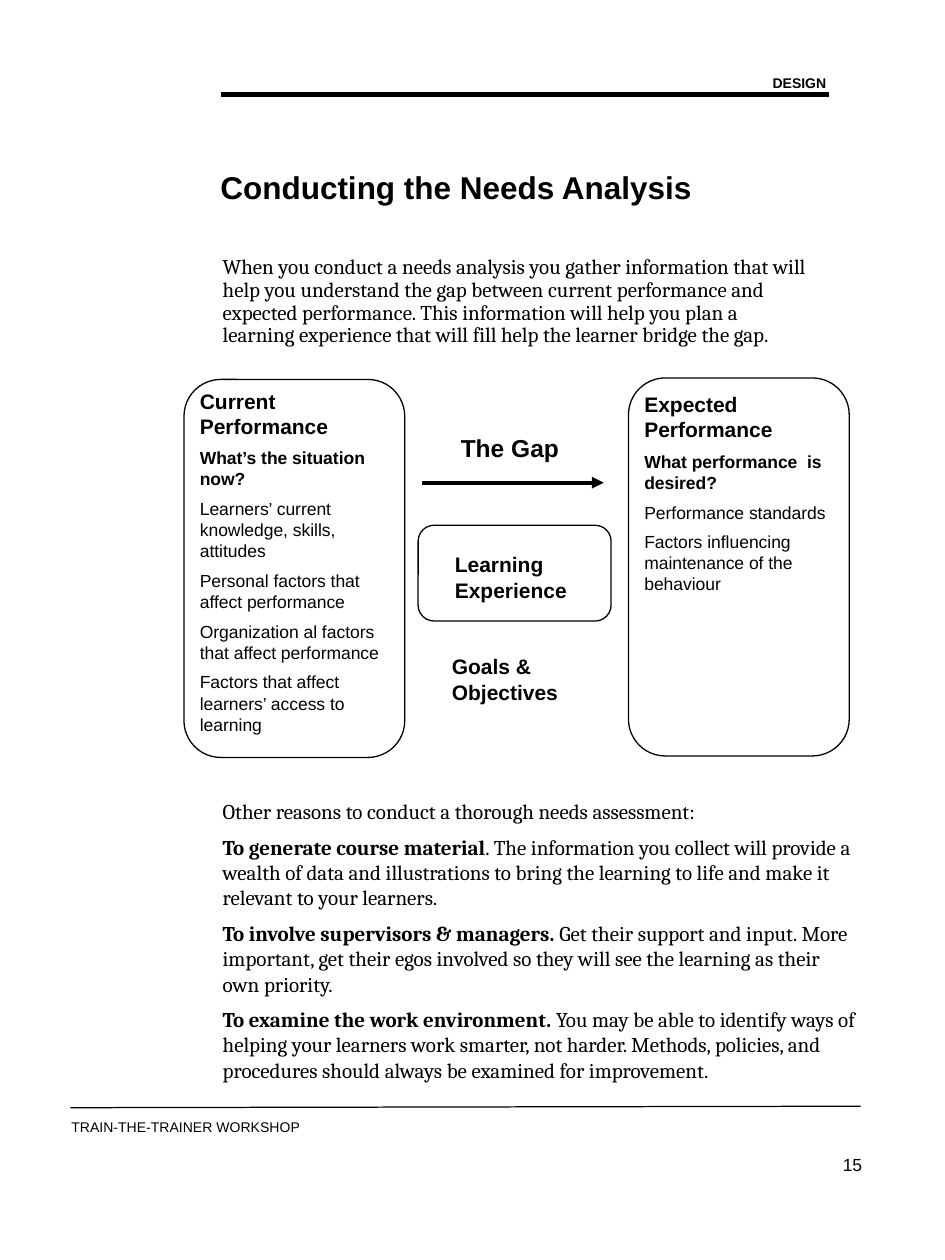
from lxml import etree
from pptx import Presentation
from pptx.dml.color import RGBColor
from pptx.enum.shapes import MSO_CONNECTOR, MSO_SHAPE
from pptx.enum.text import MSO_ANCHOR, MSO_AUTO_SIZE, PP_ALIGN
from pptx.oxml.ns import qn
from pptx.util import Cm, Pt

ROUND = MSO_SHAPE.ROUNDED_RECTANGLE
STRAIGHT = MSO_CONNECTOR.STRAIGHT
LEFT, RIGHT = PP_ALIGN.LEFT, PP_ALIGN.RIGHT
MIDDLE = MSO_ANCHOR.MIDDLE
GROW, FIXED = MSO_AUTO_SIZE.SHAPE_TO_FIT_TEXT, MSO_AUTO_SIZE.NONE
COLORS = {"ink": "000000"}
SANS, SERIF = "Arial", "Cambria"


def ink():
    """Return the colour of all text and lines."""
    return RGBColor.from_string(COLORS["ink"])


def write(frame, paras, size=12, font=SANS, bold=False, align=LEFT, lead=None):
    """Fill a frame; a paragraph is a list of (text, size, bold) or a string."""
    frame.word_wrap = True
    for i, runs in enumerate(paras):
        para = frame.paragraphs[0] if i == 0 else frame.add_paragraph()
        para.alignment = align
        if lead:
            para.line_spacing = lead
        if isinstance(runs, str):
            runs = [(runs, size, bold)]
        para.space_before = Pt(runs[0][1] / 2 if i else 0)
        for words, points, heavy in runs:
            run = para.add_run()
            run.text = words
            run.font.name = font
            run.font.size = Pt(points)
            run.font.bold = heavy
            run.font.color.rgb = ink()


def label(slide, box, paras, **style):
    """Add a text box at (left, top, width, height) in centimetres."""
    shape = slide.shapes.add_textbox(*map(Cm, box))
    shape.text_frame.auto_size = GROW
    write(shape.text_frame, paras, **style)


def rule(slide, ends, width, arrow=False):
    """Draw a straight line between two points, with an optional arrowhead."""
    line = slide.shapes.add_connector(STRAIGHT, *map(Cm, ends))
    line.line.color.rgb = ink()
    line.line.width = Pt(width)
    if arrow:
        etree.SubElement(line.line._get_or_add_ln(), qn("a:tailEnd"), type="triangle")
    etree.SubElement(line._element.spPr, qn("a:effectLst"))


def frame(slide, box):
    """Draw an unfilled rounded outline."""
    shape = slide.shapes.add_shape(ROUND, *map(Cm, box))
    shape.shadow.inherit = False
    shape.fill.background()
    shape.line.color.rgb = ink()
    shape.line.width = Pt(0.75)


def header(slide, box):
    """Place the section name, its rule and the slide title."""
    x, y, w, h = box
    rule(slide, (x, y + 0.54, x + w, y + 0.54), 3)
    label(slide, (x + w - 6.35, y, 6.55, h), ["DESIGN"], size=8, bold=True, align=RIGHT)
    title = slide.shapes.title
    title.left, title.top = Cm(x - 0.26), Cm(y + 2.29)
    title.width, title.height = Cm(11.86), Cm(0.2)
    title.text_frame.auto_size = FIXED
    title.text_frame.vertical_anchor = MIDDLE
    write(title.text_frame, ["Conducting the Needs Analysis"], size=18, bold=True)


def card(slide, box, drop, head, ask, points):
    """Place a performance card: outline, heading, question and points."""
    x, y, w, h = box
    frame(slide, box)
    paras = [[(head, 12, True)], [(ask, 10, True)], *points]
    label(slide, (x + 0.07, y + drop, w - 0.11, h - 0.2), paras, size=10)


def gap(slide, box):
    """Place the arrow, learning box and goals between the cards."""
    x, y, w, h = box
    rule(slide, (x + 0.08, y + 2.11, x + 3.74, y + 2.11), 2.25, arrow=True)
    label(slide, (x + 0.61, y + 0.99, 2.97, 0.84), ["The Gap"], size=14, bold=True)
    frame(slide, (x, y + 2.97, w, 1.93))
    label(slide, (x + 0.49, y + 3.38, 2.97, 1.27), ["Learning Experience"], bold=True)
    label(slide, (x + 0.43, y + 5.44, 2.9, 1.27), ["Goals & Objectives"], bold=True)


def reasons(slide, box):
    """Place the closing list of reasons."""
    pairs = [
        ("To generate course material", ". The information you collect will provide a wealth of data and "
         "illustrations to bring the learning to life and make it relevant to your learners."),
        ("To involve supervisors & managers.", " Get their support and input. More important, get their "
         "egos involved so they will see the learning as their own priority."),
        ("To examine the work environment.", " You may be able to identify ways of helping your learners "
         "work smarter, not harder. Methods, policies, and procedures should always be examined for "
         "improvement."),
    ]
    paras = [[(lead, 12, True), (rest, 12, False)] for lead, rest in pairs]
    label(slide, box, ["Other reasons to conduct a thorough needs assessment:", *paras], font=SERIF)


def footer(slide, box):
    """Place the bottom rule, workshop name and page number."""
    x, y, w, h = box
    rule(slide, (x, y + 0.03, x + w, y), 0.7)
    label(slide, (x - 0.23, y + 0.13, 8.89, 0.58), ["TRAIN-THE-TRAINER WORKSHOP"], size=8)
    label(slide, (x + w - 3.68, y + 0.84, 3.96, h - 0.84), ["15"], size=10, align=RIGHT)


def main():
    """Build and save the slide."""
    deck = Presentation()
    deck.slide_width, deck.slide_height = Cm(19.05), Cm(25.4)
    slide = deck.slides.add_slide(deck.slide_layouts[5])
    header(slide, (4.45, 1.37, 12.26, 0.58))
    label(slide, (4.24, 5.05, 12.27, 2.08), [
        "When you conduct a needs analysis you gather information that will help you understand "
        "the gap between current performance and expected performance. This information will help "
        "you plan a learning experience that will fill help the learner bridge the gap."
    ], font=SERIF, lead=0.9)
    card(slide, (3.71, 7.65, 4.45, 7.62), 0.05, "Current Performance", "What’s the situation now?", [
        "Learners’ current knowledge, skills, attitudes",
        "Personal factors that affect performance",
        "Organization al factors that affect performance",
        "Factors that affect learners’ access to learning",
    ])
    card(slide, (12.67, 7.62, 4.45, 7.62), 0.15, "Expected Performance", "What performance  is desired?", [
        "Performance standards",
        "Factors influencing maintenance of the behaviour",
    ])
    gap(slide, (8.43, 7.62, 3.89, 7.62))
    reasons(slide, (4.24, 15.98, 13.34, 6.1))
    footer(slide, (1.42, 22.3, 15.93, 2.54))
    deck.save("out.pptx")


if __name__ == "__main__":
    main()
